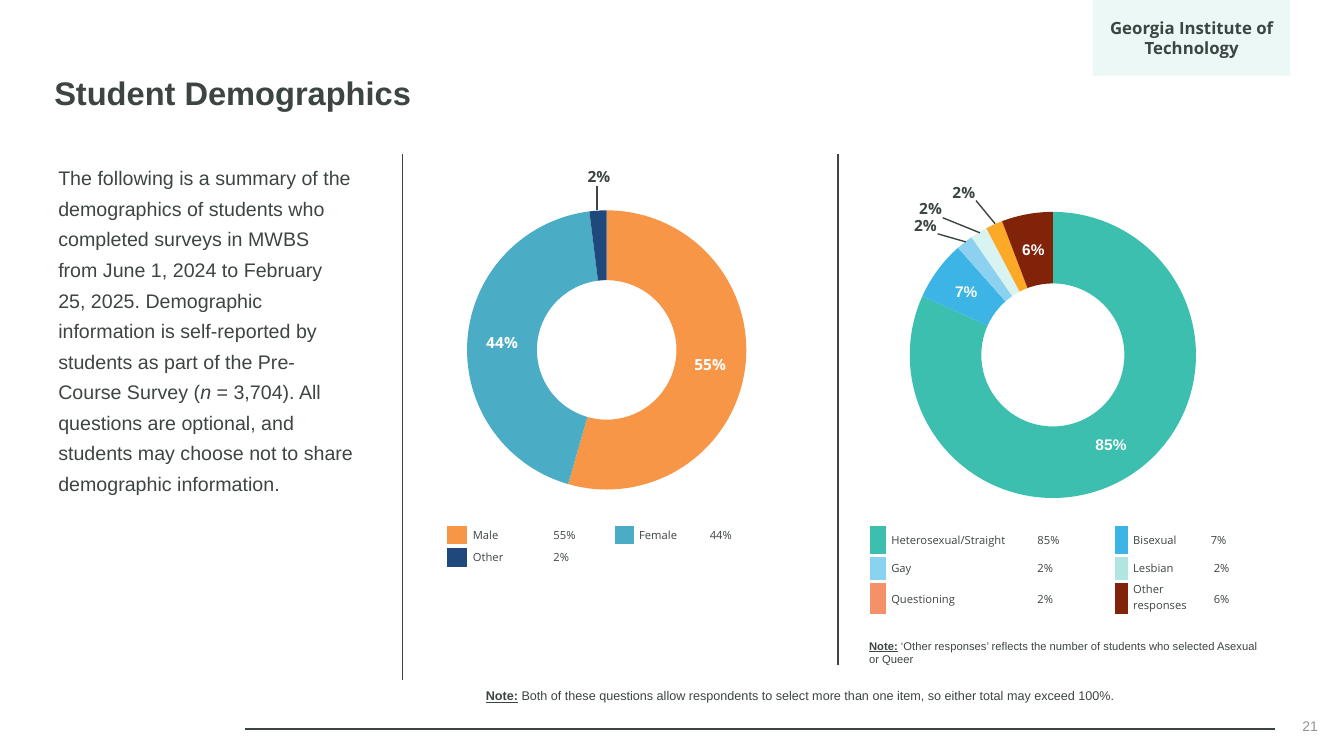
from lxml import etree
from pptx import Presentation
from pptx import util as u
from pptx.chart import data as cd
from pptx.dml.color import RGBColor
from pptx.enum import chart as ch, shapes, text
from pptx.oxml import ns

CELL = u.Inches(0.1)
COLS, ROWS = 133.3, 75
SANS, OPEN = "Arial", "Open Sans"
INSET = (1, 0.5, 1, 0.5)
FLAT = (0, 0, 0, 0)

INK = RGBColor(0x3D, 0x45, 0x42)
GRAY = RGBColor(0x92, 0x94, 0x93)
WHITE = RGBColor(0xFF, 0xFF, 0xFF)
TEAL = RGBColor(0x3C, 0xBF, 0xAE)
BADGE = RGBColor(0x3C, 0xC0, 0xAF)
ORANGE = RGBColor(0xF7, 0x96, 0x46)
AQUA = RGBColor(0x4B, 0xAC, 0xC6)
NAVY = RGBColor(0x1F, 0x49, 0x7D)
BLUE = RGBColor(0x3C, 0xB5, 0xE6)
SKY = RGBColor(0x8C, 0xD2, 0xF0)
MIST = RGBColor(0xD8, 0xF3, 0xF0)
AMBER = RGBColor(0xFB, 0xA9, 0x27)
RUST = RGBColor(0x81, 0x23, 0x09)
PALE = RGBColor(0x8A, 0xD3, 0xF0)
MINT = RGBColor(0xB0, 0xE6, 0xDF)
CORAL = RGBColor(0xF5, 0x91, 0x68)


def grid(*vals):
    return [u.Emu(round(v * CELL)) for v in vals]


def add(parent, tag, **attrs):
    return etree.SubElement(parent, ns.qn(tag), attrs)


def style(font, size, color=INK, face=SANS, bold=False):
    font.size, font.name, font.bold = u.Pt(size), face, bold
    font.color.rgb = color


def write(para, runs, size, color=INK, face=SANS):
    for words, marks in runs:
        run = para.add_run()
        run.text = words
        style(run.font, size, color, face, "b" in marks)
        run.font.italic = "i" in marks
        run.font.underline = "u" in marks


def fit(frame, inset, anchor):
    frame.word_wrap = True
    frame.vertical_anchor = anchor
    (frame.margin_left, frame.margin_top,
     frame.margin_right, frame.margin_bottom) = grid(*inset)


def add_text(slide, box, runs, size, color=INK, face=SANS, inset=INSET,
             anchor=text.MSO_ANCHOR.TOP, align=text.PP_ALIGN.LEFT, space=1.0):
    frame = slide.shapes.add_textbox(*grid(*box)).text_frame
    fit(frame, inset, anchor)
    para = frame.paragraphs[0]
    para.alignment, para.line_spacing = align, space
    write(para, runs, size, color, face)


def add_line(slide, ends, width=1):
    line = slide.shapes.add_connector(shapes.MSO_CONNECTOR.STRAIGHT, *grid(*ends))
    line.line.color.rgb = INK
    line.line.width = u.Pt(width)
    add(line._element.spPr, "a:effectLst")


def add_badge(slide, box, words):
    badge = slide.shapes.add_shape(shapes.MSO_SHAPE.RECTANGLE, *grid(*box))
    badge.shadow.inherit = False
    badge.line.fill.background()
    badge.fill.solid()
    badge.fill.fore_color.rgb = BADGE
    tint = badge._element.spPr.find(".//" + ns.qn("a:srgbClr"))
    add(tint, "a:alpha", val="10000")
    fit(badge.text_frame, (1, 0, 1, 0), text.MSO_ANCHOR.MIDDLE)
    para = badge.text_frame.paragraphs[0]
    para.alignment = text.PP_ALIGN.CENTER
    write(para, [(words, "b")], 12, INK, OPEN)


def add_ring(slide, box, area, slices, face, hide):
    data = cd.CategoryChartData(number_format="0%")
    data.categories = [str(n + 1) for n in range(len(slices))]
    data.add_series("Series 1", [val for val, _ in slices])
    chart = slide.shapes.add_chart(ch.XL_CHART_TYPE.DOUGHNUT, *grid(*box), data).chart
    chart.has_legend = chart.has_title = False
    style(chart.font, 10)
    chart.plots[0].vary_by_categories = True
    series = chart.plots[0].series[0]
    for n, (_, color) in enumerate(slices):
        fill = series.points[n].format.fill
        fill.solid()
        fill.fore_color.rgb = color
    labels = series.data_labels
    labels.show_value, labels.show_percentage = True, False
    labels.number_format, labels.number_format_is_linked = "0%", False
    style(labels.font, 11, WHITE, face, True)
    for spot, n in enumerate(hide):
        label = etree.Element(ns.qn("c:dLbl"))
        add(label, "c:idx", val=str(n))
        add(label, "c:delete", val="1")
        labels._element.insert(spot, label)
    plot = chart._chartSpace.chart.plotArea
    for old in plot.findall(ns.qn("c:layout")):
        plot.remove(old)
    layout = etree.Element(ns.qn("c:layout"))
    plot.insert(0, layout)
    manual = add(layout, "c:manualLayout")
    add(manual, "c:layoutTarget", val="inner")
    add(manual, "c:xMode", val="edge")
    add(manual, "c:yMode", val="edge")
    for key, val in zip("xywh", area):
        add(manual, "c:" + key, val=str(val))


def add_mark(slide, mid, ends):
    x, y = mid
    add_text(slide, (x - 2.5, y - 1.2, 5, 2.4), [("2%", "b")], 11, INK, OPEN,
             FLAT, text.MSO_ANCHOR.MIDDLE, text.PP_ALIGN.CENTER)
    add_line(slide, ends)


def fill_cell(cell, item, left, top):
    props = cell._tc.get_or_add_tcPr()
    for side in ("a:lnT", "a:lnB"):
        edge = add(props, side, w=str(u.Pt(3)))
        add(add(edge, "a:solidFill"), "a:srgbClr", val=str(WHITE))
    (cell.margin_left, cell.margin_top,
     cell.margin_right, cell.margin_bottom) = grid(left, 0, 0, 0)
    cell.vertical_anchor = text.MSO_ANCHOR.TOP if top else text.MSO_ANCHOR.MIDDLE
    para = cell.text_frame.paragraphs[0]
    if isinstance(item, str) and item:
        cell.fill.background()
        write(para, [(item, "")], 8, INK, OPEN)
    else:
        cell.fill.solid()
        cell.fill.fore_color.rgb = item or WHITE
        para._p.get_or_add_endParaRPr().set("sz", "800")


def add_key(slide, at, cols, rows, items):
    size = (sum(cols), sum(rows))
    table = slide.shapes.add_table(len(rows), len(cols), *grid(*at, *size)).table
    table.first_row = table.horz_banding = False
    for col, wide in zip(table.columns, grid(*cols)):
        col.width = wide
    for row, high in zip(table.rows, grid(*rows)):
        row.height = high
    for r, line in enumerate(items):
        for c, item in enumerate(line):
            left = 0.5 if c % 3 == 1 else 0.3 if c % 3 == 2 else 0
            if item in ("44%", "7%"):
                left = 0
            fill_cell(table.cell(r, c), item, left, item == "Other responses")


def main():
    deck = Presentation()
    deck.slide_width, deck.slide_height = grid(COLS, ROWS)
    slide = deck.slides.add_slide(deck.slide_layouts[6])
    mid = text.MSO_ANCHOR.MIDDLE

    add_line(slide, (126.5, 72.3, 24.3, 72.3), 1.5)
    add_text(slide, (101.7, 70, 30, 4), [("21", "")], 10, GRAY,
             anchor=mid, align=text.PP_ALIGN.RIGHT)
    add_text(slide, (4.4, 5.9, 45.6, 7), [("Student Demographics", "b")], 23.3,
             anchor=mid, space=0.9)
    add_text(slide, (4.8, 15.3, 31.3, 34.5), [
        ("The following is a summary of the demographics of students who completed "
         "surveys in MWBS from June 1, 2024 to February 25, 2025. Demographic "
         "information is self-reported by students as part of the Pre-Course Survey (", ""),
        ("n", "i"),
        (" = 3,704). All questions are optional, and students may choose not to "
         "share demographic information.", "")], 14, space=1.3)
    add_line(slide, (39.9, 15.3, 39.9, 67.5))
    add_line(slide, (83.1, 15.3, 83.1, 66))
    add_badge(slide, (108.4, 0, 19.6, 7.5), "Georgia Institute of Technology")

    add_ring(slide, (42.9, 11.5, 34.2, 39.7), (0.1, 0.2, 0.81, 0.77),
             [(0.55, ORANGE), (0.44, AQUA), (0.02, NAVY)], OPEN, [2])
    add_mark(slide, (59.4, 17.5), (59.2, 18.5, 59.2, 20.8))
    add_key(slide, (44.3, 52), (2.1, 8.2, 6.3, 2, 7.5, 5), (2.2, 2.2), [
        (ORANGE, "Male", "55%", AQUA, "Female", "44%"),
        (NAVY, "Other", "2%", "", "", "")])

    add_ring(slide, (85.5, 10.5, 36.4, 41.2), (0.13, 0.27, 0.78, 0.8),
             [(0.85, TEAL), (0.07, BLUE), (0.02, SKY), (0.02, MIST),
              (0.02, AMBER), (0.06, RUST)], SANS, [2, 3, 4])
    add_mark(slide, (91.8, 22.4), (93, 23.2, 95.8, 24))
    add_mark(slide, (92.3, 20.7), (93.5, 21.6, 97.2, 23.1))
    add_mark(slide, (95.6, 19.1), (96.8, 19.9, 98.7, 22.2))
    add_key(slide, (86.2, 52), (1.7, 14.7, 7.9, 1.4, 8.2, 7), (3.1, 2.6, 3.4), [
        (TEAL, "Heterosexual/Straight", "85%", BLUE, "Bisexual", "7%"),
        (PALE, "Gay", "2%", MINT, "Lesbian", "2%"),
        (CORAL, "Questioning", "2%", RUST, "Other responses", "6%")])

    add_text(slide, (86.2, 63.4, 39.4, 2.8), [
        ("Note:", "bu"),
        (" ‘Other responses’ reflects the number of students who selected "
         "Asexual or Queer", "")], 8, inset=FLAT)
    add_text(slide, (47.2, 67.8, 78.1, 2.5), [
        ("Note:", "bu"),
        (" Both of these questions allow respondents to select more than one item, "
         "so either total may exceed 100%.", "")], 9)
    deck.save("out.pptx")


if __name__ == "__main__":
    main()
